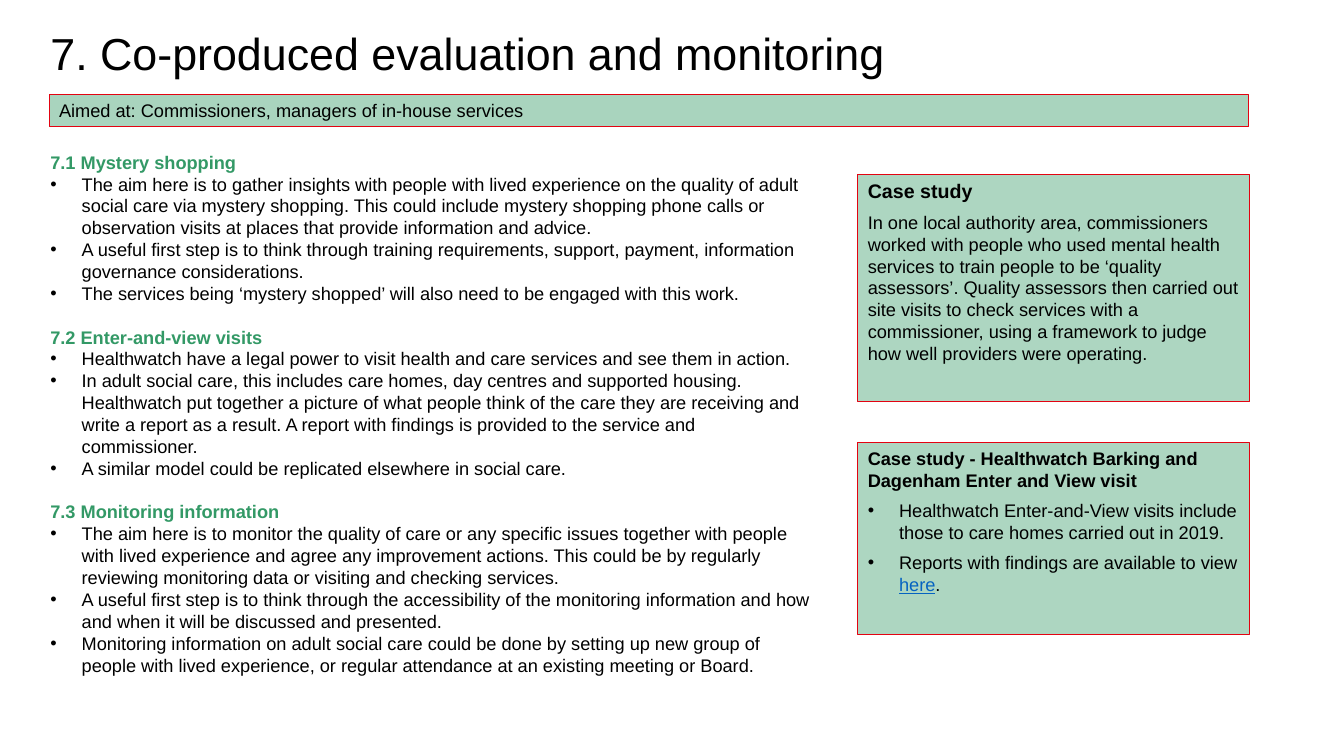
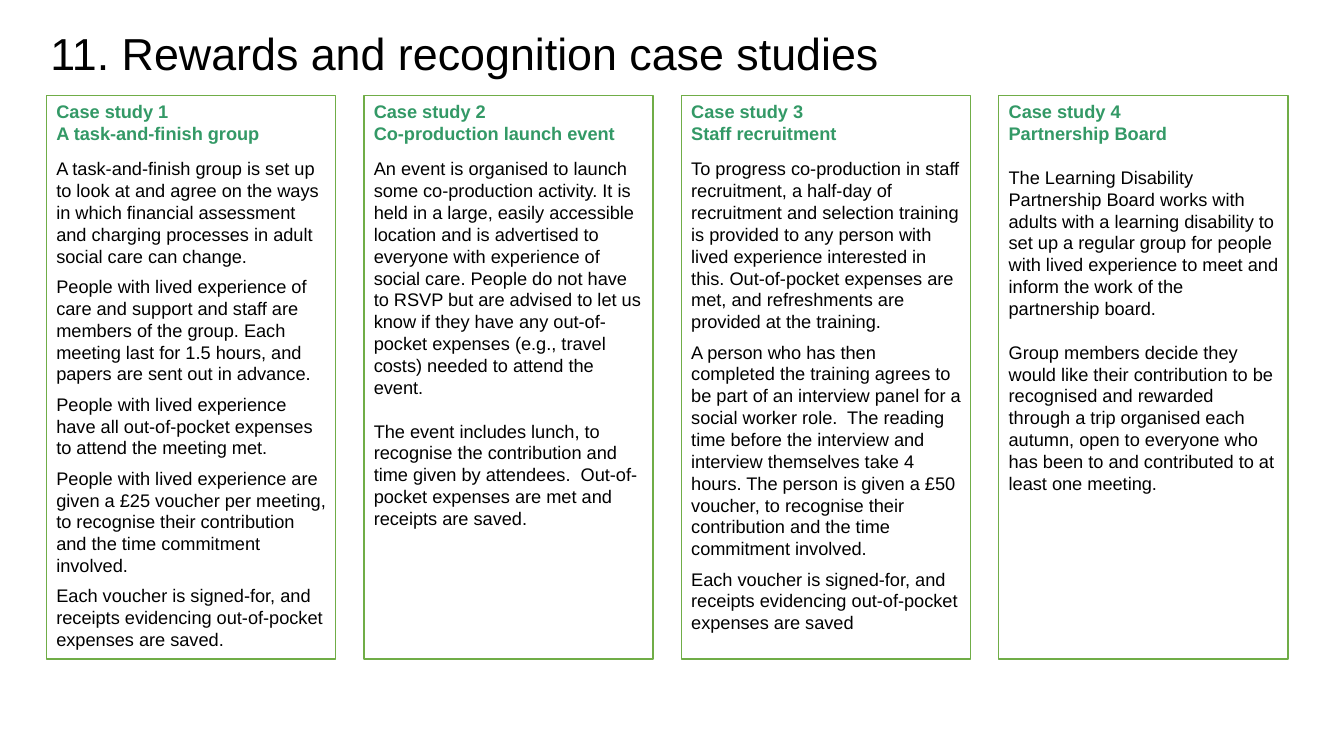
from lxml import etree
from pptx import Presentation
from pptx.dml.color import RGBColor
from pptx.enum.shapes import MSO_SHAPE as SHAPE
from pptx.enum.text import MSO_ANCHOR as ANCHOR, PP_ALIGN as ALIGN
from pptx.oxml.ns import qn
from pptx.util import Cm, Pt

# Shared style
FONT = "Arial"
BLACK, WHITE, GREEN = "000000", "FFFFFF", "339966"
RED, LIME, LINK = "E30311", "70AD47", "0563C1"
SIZE, LINE_GAP, SMALL_GAP = 13, 15.6, 9.4
INDENT = Cm(0.79)
rgb = RGBColor.from_string


def box(s, x, y, w, h, fill=None, line=None, weight=0.75, opacity=100):
    """Add a text box, or a rectangle when a fill is given; return its text frame."""
    if fill:
        sp = s.shapes.add_shape(SHAPE.RECTANGLE, Cm(x), Cm(y), Cm(w), Cm(h))
        sp.shadow.inherit = False
        sp.fill.solid()
        sp.fill.fore_color.rgb = rgb(fill)
        if opacity < 100:
            color = sp.fill._xPr.find(".//" + qn("a:srgbClr"))
            etree.SubElement(color, qn("a:alpha"), val=str(opacity * 1000))
        sp.line.color.rgb = rgb(line)
        sp.line.width = Pt(weight)
    else:
        sp = s.shapes.add_textbox(Cm(x), Cm(y), Cm(w), Cm(h))
    tf = sp.text_frame
    tf.word_wrap = True
    tf.vertical_anchor = ANCHOR.TOP
    return tf


def write(tf, text, p=None, size=SIZE, color=BLACK, bold=False, underline=None,
          bullet=False, before=0, after=0):
    """Add a paragraph, or a further run when p is given; return the paragraph."""
    if p is None:
        first = tf.paragraphs[0]
        p = tf.add_paragraph() if first.runs else first
        p.alignment = ALIGN.LEFT
        p.space_before, p.space_after = Pt(before), Pt(after)
        if bullet:
            pPr = p._p.get_or_add_pPr()
            pPr.set("marL", str(INDENT))
            pPr.set("indent", str(-INDENT))
            etree.SubElement(pPr, qn("a:buFont"), typeface=FONT)
            etree.SubElement(pPr, qn("a:buChar"), char="•")
    r = p.add_run()
    r.text = text
    r.font.name, r.font.size = FONT, Pt(size)
    r.font.bold, r.font.underline = bold, underline
    r.font.color.rgb = rgb(color)
    return p


prs = Presentation()
prs.slide_width, prs.slide_height = Cm(33.87), Cm(19.05)

# Slides and titles
slides = []
for title in ("7. Co-produced evaluation and monitoring",
              "11. Rewards and recognition case studies"):
    s = prs.slides.add_slide(prs.slide_layouts[6])
    write(box(s, 1.02, 0.53, 32.33, 1.63), title, size=32)
    slides.append(s)
monitoring, rewards = slides

# Audience band
tf = box(monitoring, 1.24, 2.39, 30.23, 0.81, GREEN, RED, opacity=42)
write(tf, "Aimed at: Commissioners, managers of in-house services")

# Numbered sections
sections = [
    ("7.1 Mystery shopping", [
        "The aim here is to gather insights with people with lived experience on the "
        "quality of adult social care via mystery shopping. This could include mystery "
        "shopping phone calls or observation visits at places that provide information "
        "and advice.",
        "A useful first step is to think through training requirements, support, "
        "payment, information governance considerations.",
        "The services being ‘mystery shopped’ will also need to be engaged with this "
        "work."]),
    ("7.2 Enter-and-view visits", [
        "Healthwatch have a legal power to visit health and care services and see them "
        "in action.",
        "In adult social care, this includes care homes, day centres and supported "
        "housing. Healthwatch put together a picture of what people think of the care "
        "they are receiving and write a report as a result. A report with findings is "
        "provided to the service and commissioner.",
        "A similar model could be replicated elsewhere in social care."]),
    ("7.3 Monitoring information", [
        "The aim here is to monitor the quality of care or any specific issues together "
        "with people with lived experience and agree any improvement actions. This "
        "could be by regularly reviewing monitoring data or visiting and checking "
        "services.",
        "A useful first step is to think through the accessibility of the monitoring "
        "information and how and when it will be discussed and presented.",
        "Monitoring information on adult social care could be done by setting up new "
        "group of people with lived experience, or regular attendance at an existing "
        "meeting or Board."]),
]
tf = box(monitoring, 1.02, 3.68, 19.74, 13.89)
for i, (heading, points) in enumerate(sections):
    write(tf, heading, color=GREEN, bold=True, before=LINE_GAP if i else 0)
    for point in points:
        write(tf, point, bullet=True)

# Case study panels
tf = box(monitoring, 21.62, 4.39, 9.88, 5.74, GREEN, RED, opacity=40)
write(tf, "Case study", size=14, bold=True, after=6)
write(tf, "In one local authority area, commissioners worked with people who used mental "
          "health services to train people to be ‘quality assessors’. Quality assessors "
          "then carried out site visits to check services with a commissioner, using a "
          "framework to judge how well providers were operating.", after=6)

tf = box(monitoring, 21.62, 11.15, 9.88, 4.83, GREEN, RED, opacity=40)
write(tf, "Case study - Healthwatch Barking and Dagenham Enter and View visit",
      bold=True, after=6)
write(tf, "Healthwatch Enter-and-View visits include those to care homes carried out in "
          "2019.", bullet=True, after=6)
p = write(tf, "Reports with findings are available to view ", bullet=True, after=6)
write(tf, "here", p, color=LINK, underline=True)
write(tf, ".", p)

# Reward case studies: name, gap under the heading, gap between paragraphs, text
cases = [
    ("A task-and-finish group", SMALL_GAP, 6, [
        "A task-and-finish group is set up to look at and agree on the ways in which "
        "financial assessment and charging processes in adult social care can change.",
        "People with lived experience of care and support and staff are members of the "
        "group. Each meeting last for 1.5 hours, and papers are sent out in advance.",
        "People with lived experience have all out-of-pocket expenses to attend the "
        "meeting met.",
        "People with lived experience are given a £25 voucher per meeting, to recognise "
        "their contribution and the time commitment involved.",
        "Each voucher is signed-for, and receipts evidencing out-of-pocket expenses are "
        "saved."]),
    ("Co-production launch event", SMALL_GAP, LINE_GAP, [
        "An event is organised to launch some co-production activity. It is held in a "
        "large, easily accessible location and is advertised to everyone with "
        "experience of social care. People do not have to RSVP but are advised to let "
        "us know if they have any out-of-pocket expenses (e.g., travel costs) needed to "
        "attend the event.",
        "The event includes lunch, to recognise the contribution and time given by "
        "attendees.  Out-of-pocket expenses are met and receipts are saved."]),
    ("Staff recruitment", SMALL_GAP, 6, [
        "To progress co-production in staff recruitment, a half-day of recruitment and "
        "selection training is provided to any person with lived experience interested "
        "in this. Out-of-pocket expenses are met, and refreshments are provided at the "
        "training.",
        "A person who has then completed the training agrees to be part of an interview "
        "panel for a social worker role.  The reading time before the interview and "
        "interview themselves take 4 hours. The person is given a £50 voucher, to "
        "recognise their contribution and the time commitment involved.",
        "Each voucher is signed-for, and receipts evidencing out-of-pocket expenses are "
        "saved"]),
    ("Partnership Board", LINE_GAP, LINE_GAP, [
        "The Learning Disability Partnership Board works with adults with a learning "
        "disability to set up a regular group for people with lived experience to meet "
        "and inform the work of the partnership board.",
        "Group members decide they would like their contribution to be recognised and "
        "rewarded through a trip organised each autumn, open to everyone who has been "
        "to and contributed to at least one meeting."]),
]
for i, (name, top_gap, gap, paragraphs) in enumerate(cases):
    tf = box(rewards, 1.17 + 8 * i, 2.41, 7.29, 14.2, WHITE, LIME, weight=1)
    for heading in (f"Case study {i + 1}", name):
        write(tf, heading, color=GREEN, bold=True)
    for j, text in enumerate(paragraphs):
        write(tf, text, before=gap if j else top_gap)

prs.save("out.pptx")
